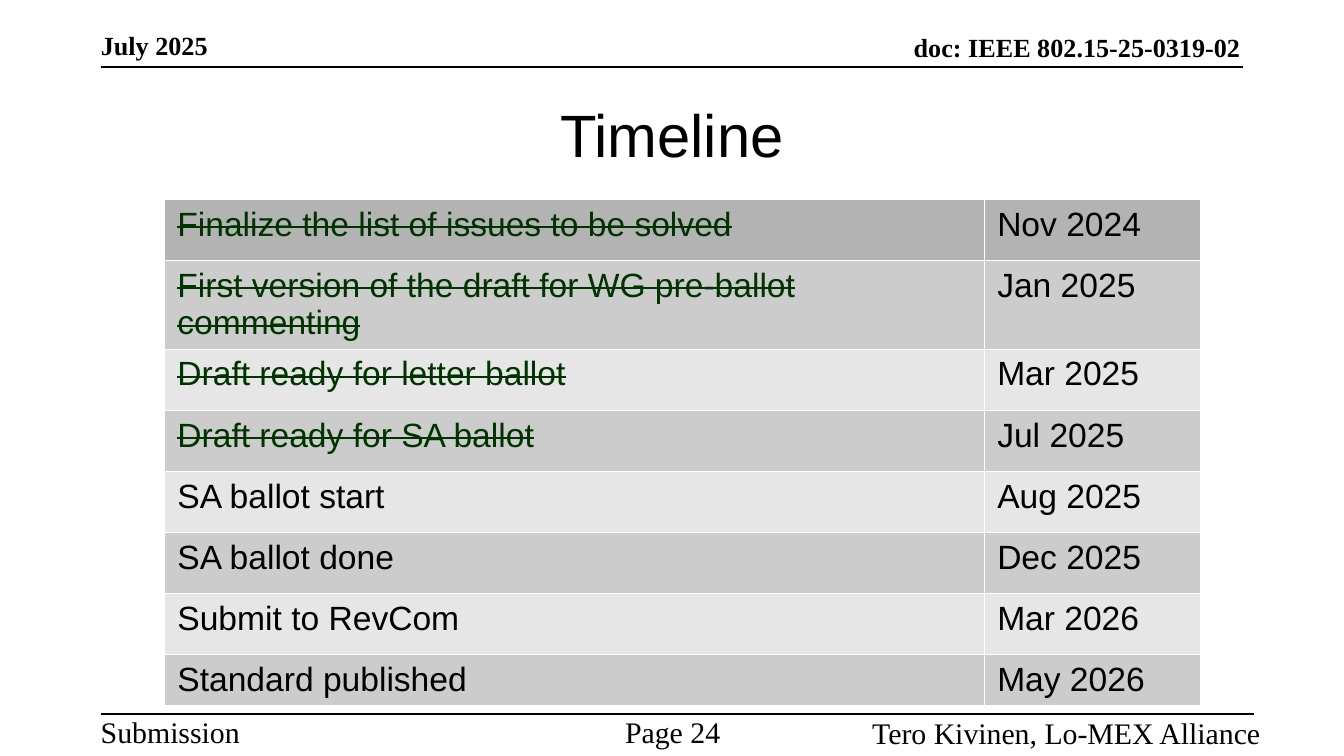
from dataclasses import dataclass

from lxml.etree import SubElement
from pptx import Presentation
from pptx.dml.color import RGBColor
from pptx.enum.shapes import MSO_CONNECTOR
from pptx.enum.text import MSO_ANCHOR, PP_ALIGN
from pptx.oxml.ns import qn
from pptx.util import Inches, Pt


@dataclass(frozen=True)
class Theme:
    serif: str = "Times New Roman"
    sans: str = "Arial"
    ink: str = "000000"
    done: str = "003300"
    border: str = "FFFFFF"
    header: str = "B3B3B3"
    bands: tuple[str, str] = ("CCCCCC", "E6E6E6")
    title_size: int = 32
    cell_size: int = 18
    footer_size: int = 16
    header_size: int = 14
    rule_width: float = 1
    border_width: float = 0.06


@dataclass(frozen=True)
class Label:
    text: str
    box: tuple[float, float, float, float]
    size: int
    font: str = "Times New Roman"
    bold: bool = False
    align: PP_ALIGN = PP_ALIGN.LEFT
    anchor: MSO_ANCHOR = MSO_ANCHOR.TOP


@dataclass(frozen=True)
class Rule:
    left: float
    right: float
    y: float


@dataclass(frozen=True)
class Milestone:
    task: str
    date: str
    done: bool = False


THEME = Theme()
SLIDE_WIDTH = 10
SLIDE_HEIGHT = SLIDE_WIDTH * 9 / 16

LABELS = [
    Label("doc: IEEE 802.15-25-0319-02", (3.39, 0.32, 5.84, 0.15), THEME.header_size,
          THEME.serif, True, PP_ALIGN.RIGHT, MSO_ANCHOR.BOTTOM),
    Label("July 2025", (0.75, 0.3, 2.79, 0.15), THEME.header_size,
          THEME.serif, True, anchor=MSO_ANCHOR.BOTTOM),
    Label("Submission", (0.75, 5.31, 1.87, 0.23), THEME.footer_size),
    Label("Page 24", (4.07, 5.31, 1.87, 0.23), THEME.footer_size, align=PP_ALIGN.CENTER),
    Label("Tero Kivinen, Lo-MEX Alliance", (5.71, 5.32, 3.67, 0.23), THEME.footer_size,
          align=PP_ALIGN.RIGHT),
    Label("Timeline", (0.5, 0.48, 9, 1.03), THEME.title_size, THEME.sans,
          align=PP_ALIGN.CENTER, anchor=MSO_ANCHOR.MIDDLE),
]

RULES = [Rule(0.75, 9.25, 0.5), Rule(0.75, 9.33, 5.31)]

MILESTONES = [
    Milestone("Finalize the list of issues to be solved", "Nov 2024", True),
    Milestone("First version of the draft for WG pre-ballot commenting", "Jan 2025", True),
    Milestone("Draft ready for letter ballot", "Mar 2025", True),
    Milestone("Draft ready for SA ballot", "Jul 2025", True),
    Milestone("SA ballot start", "Aug 2025"),
    Milestone("SA ballot done", "Dec 2025"),
    Milestone("Submit to RevCom", "Mar 2026"),
    Milestone("Standard published", "May 2026"),
]

TABLE_BOX = (1.22, 1.48, 7.71, 3.77)
COLUMN_WIDTHS = (6.1, 1.61)
WRAPPED_ROW, WRAPPED_HEIGHT, LAST_HEIGHT = 1, 0.66, 0.38
CELL_FORMAT = {"margin_left": Inches(0.1), "margin_right": Inches(0.1),
               "margin_top": Inches(0.05), "margin_bottom": Inches(0.01)}


def add_run(p, text: str, size: int, font: str, color: str, bold: bool = False):
    r = p.add_run()
    r.text = text
    for name, value in {"size": Pt(size), "name": font, "bold": bold}.items():
        setattr(r.font, name, value)
    r.font.color.rgb = RGBColor.from_string(color)
    return r


def add_label(s, label: Label) -> None:
    tf = s.shapes.add_textbox(*map(Inches, label.box)).text_frame
    frame = {"word_wrap": True, "vertical_anchor": label.anchor, "margin_left": 0,
             "margin_top": 0, "margin_right": 0, "margin_bottom": 0}
    for name, value in frame.items():
        setattr(tf, name, value)
    p = tf.paragraphs[0]
    p.alignment = label.align
    add_run(p, label.text, label.size, label.font, THEME.ink, label.bold)


def add_rule(s, rule: Rule) -> None:
    ends = map(Inches, (rule.left, rule.y, rule.right, rule.y))
    sp = s.shapes.add_connector(MSO_CONNECTOR.STRAIGHT, *ends)
    sp.line.color.rgb = RGBColor.from_string(THEME.ink)
    sp.line.width = Pt(THEME.rule_width)
    SubElement(sp._element.spPr, qn("a:effectLst"))


def fill_cell(cell, text: str, fill: str, done: bool) -> None:
    for name, value in CELL_FORMAT.items():
        setattr(cell, name, value)
    tc_pr = cell._tc.get_or_add_tcPr()
    for side in ("lnL", "lnR", "lnT", "lnB"):
        ln = SubElement(tc_pr, qn(f"a:{side}"), w=str(int(Pt(THEME.border_width))))
        solid = SubElement(ln, qn("a:solidFill"))
        SubElement(solid, qn("a:srgbClr"), val=THEME.border)
    cell.fill.solid()
    cell.fill.fore_color.rgb = RGBColor.from_string(fill)
    color = THEME.done if done else THEME.ink
    r = add_run(cell.text_frame.paragraphs[0], text, THEME.cell_size, THEME.sans, color)
    if done:
        r._r.get_or_add_rPr().set("strike", "sngStrike")


def add_timeline(s, milestones: list[Milestone]) -> None:
    rows = len(milestones)
    table = s.shapes.add_table(rows, len(COLUMN_WIDTHS), *map(Inches, TABLE_BOX)).table
    table.first_row = table.horz_banding = False
    for column, width in zip(table.columns, COLUMN_WIDTHS):
        column.width = Inches(width)
    regular = (TABLE_BOX[3] - WRAPPED_HEIGHT - LAST_HEIGHT) / (rows - 2)
    heights = {WRAPPED_ROW: WRAPPED_HEIGHT, rows - 1: LAST_HEIGHT}
    for i, milestone in enumerate(milestones):
        table.rows[i].height = Inches(heights.get(i, regular))
        fill = THEME.bands[(i - 1) % 2] if i else THEME.header
        fill_cell(table.cell(i, 0), milestone.task, fill, milestone.done)
        fill_cell(table.cell(i, 1), milestone.date, fill, False)


def main() -> None:
    prs = Presentation()
    prs.slide_width, prs.slide_height = Inches(SLIDE_WIDTH), Inches(SLIDE_HEIGHT)
    s = prs.slides.add_slide(prs.slide_layouts[6])
    for rule in RULES:
        add_rule(s, rule)
    for label in LABELS:
        add_label(s, label)
    add_timeline(s, MILESTONES)
    prs.save("out.pptx")


if __name__ == "__main__":
    main()
